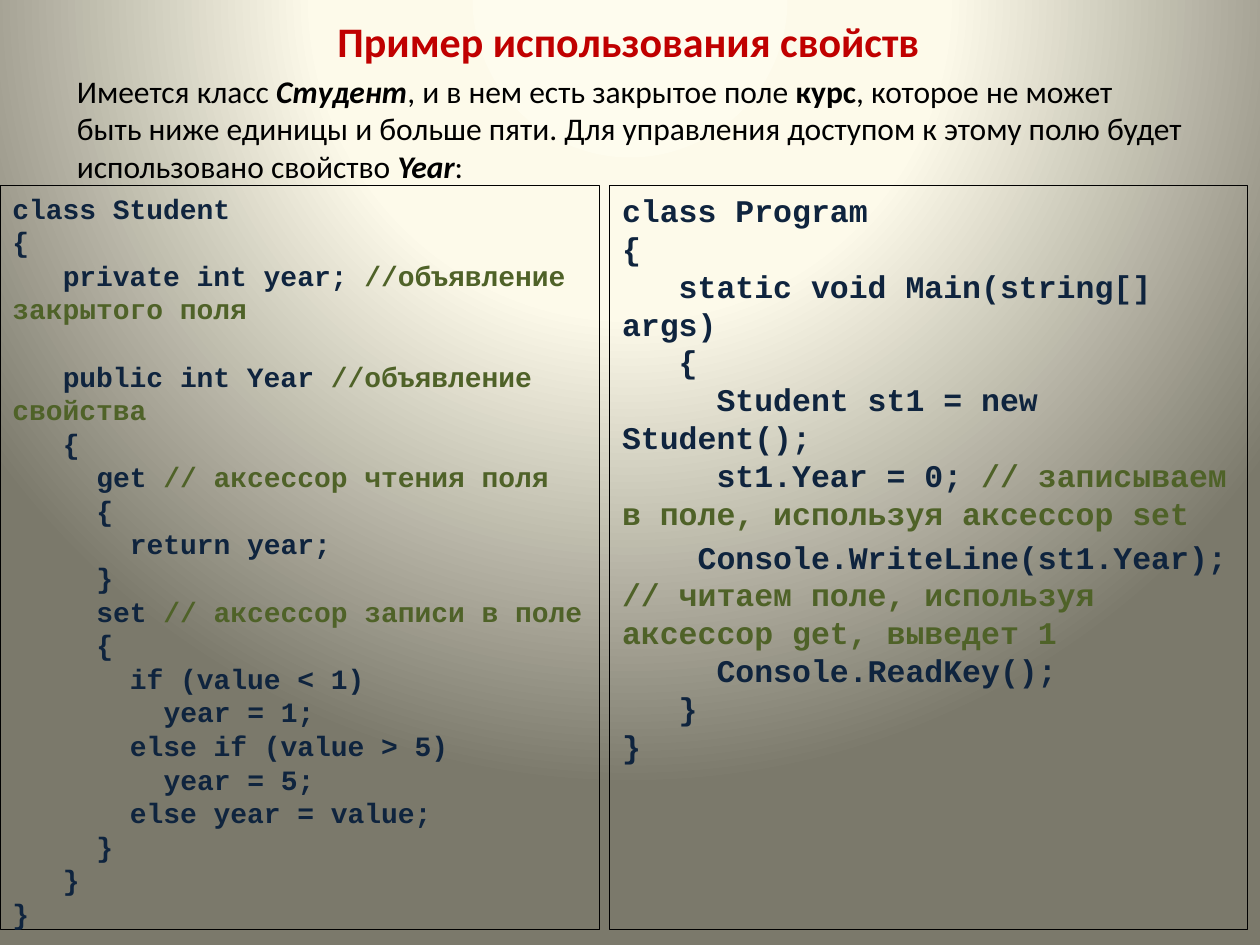
from pptx import Presentation
from pptx import util as u
from pptx.dml.color import RGBColor
from pptx.enum import shapes, text
from pptx.oxml import parse_xml

COLORS = {"title": "C00000", "text": "000000", "code": "0F243E", "note": "4F6228"}
BACK = [(0, "FEFCEE"), (40, "FDFAEA"), (100, "7B796B")]
SANS, MONO = "Calibri", "Courier New"
TOP, HIGH = 3.73, 15.01

INTRO = [
    ("Имеется класс ", ""),
    ("Студент", "bi"),
    (", и в нем есть закрытое поле ", ""),
    ("курс", "b"),
    (", которое не может быть ниже единицы и больше пяти. Для управления "
     "доступом к этому полю будет использовано свойство ", ""),
    ("Year", "bi"),
    (":", ""),
]

STUDENT = """\
class Student
{
   private int year; //объявление закрытого поля

   public int Year //объявление свойства
   {
     get // аксессор чтения поля
     {
       return year;
     }
     set // аксессор записи в поле
     {
       if (value < 1)
         year = 1;
       else if (value > 5)
         year = 5;
       else year = value;
     }
   }
}"""

PROGRAM = """\
class Program
{
   static void Main(string[] args)
   {
     Student st1 = new Student();
     st1.Year = 0; // записываем в поле, используя аксессор set
    Console.WriteLine(st1.Year); // читаем поле, используя аксессор get, выведет 1
     Console.ReadKey();
   }
}"""


def style(run, font, size, color, bold=False, italic=False):
    run.font.name = font
    run.font.size = u.Pt(size)
    run.font.color.rgb = RGBColor.from_string(COLORS[color])
    run.font.bold = bold
    run.font.italic = italic


def add_run(para, words, *look):
    run = para.add_run()
    run.text = words
    style(run, *look)


def set_back(slide):
    """Fill the background with a round gradient centred above the slide."""
    stops = "".join(
        f'<a:gs pos="{pos * 1000}"><a:srgbClr val="{color}"/></a:gs>'
        for pos, color in BACK)
    slide.element.cSld.insert(0, parse_xml(
        '<p:bg xmlns:p="http://schemas.openxmlformats.org/presentationml/2006/main"'
        ' xmlns:a="http://schemas.openxmlformats.org/drawingml/2006/main">'
        f'<p:bgPr><a:gradFill rotWithShape="1"><a:gsLst>{stops}</a:gsLst>'
        '<a:path path="circle"><a:fillToRect l="50000" t="-80000" r="50000"'
        ' b="180000"/></a:path></a:gradFill><a:effectLst/></p:bgPr></p:bg>'))


def set_title(slide, words):
    title = slide.shapes.title
    title.left, title.top = u.Cm(1.24), u.Cm(0.13)
    title.width, title.height = u.Cm(22.86), u.Cm(1.37)
    title.text_frame.text = words
    title.text_frame.vertical_anchor = text.MSO_ANCHOR.MIDDLE
    para = title.text_frame.paragraphs[0]
    para.alignment = text.PP_ALIGN.CENTER
    style(para.runs[0], SANS, 24, "title", True)


def add_intro(slide):
    box = slide.shapes.add_textbox(u.Cm(1.3), u.Cm(1.32), u.Cm(22.81), u.Cm(2.57))
    box.text_frame.word_wrap = True
    para = box.text_frame.paragraphs[0]
    for words, marks in INTRO:
        add_run(para, words, SANS, 18, "text", "b" in marks, "i" in marks)


def add_code(slide, code, left, width, size, line, gaps):
    """Frame a listing; gaps maps a line's start to the points above it."""
    box = slide.shapes.add_shape(
        shapes.MSO_SHAPE.RECTANGLE, u.Cm(left), u.Cm(TOP), u.Cm(width), u.Cm(HIGH))
    box.shadow.inherit = False
    box.fill.background()
    box.line.color.rgb = RGBColor.from_string(COLORS["text"])
    box.line.width = u.Pt(line)
    frame = box.text_frame
    frame.word_wrap = True
    frame.vertical_anchor = text.MSO_ANCHOR.TOP
    rows = [row for row in code.splitlines() if row]
    for num, row in enumerate(rows):
        para = frame.add_paragraph() if num else frame.paragraphs[0]
        para.alignment = text.PP_ALIGN.LEFT
        body = row.lstrip()
        # A fixed-width letter is 0.6 of the font size; wrapped lines start at 0.
        depth = u.Pt(0.6 * size * (len(row) - len(body)))
        props = para._p.get_or_add_pPr()
        props.set("marL", "0")
        props.set("indent", str(int(depth)))
        for start, gap in gaps.items():
            if body.startswith(start):
                para.space_before = u.Pt(gap)
        words, mark, note = body.partition("//")
        add_run(para, words, MONO, size, "code", True)
        if mark:
            add_run(para, mark + note, MONO, size, "note", True)


def main():
    deck = Presentation()
    deck.slide_width, deck.slide_height = u.Cm(25.4), u.Cm(19.05)
    slide = deck.slides.add_slide(deck.slide_layouts[5])
    set_back(slide)
    set_title(slide, "Пример использования свойств")
    add_code(slide, STUDENT, 0, 12.09, 16, 0.5, {"public": 19.2})
    add_code(slide, PROGRAM, 12.29, 12.85, 18, 0.25, {"Console.W": 3.6})
    add_intro(slide)
    deck.save("out.pptx")


if __name__ == "__main__":
    main()
